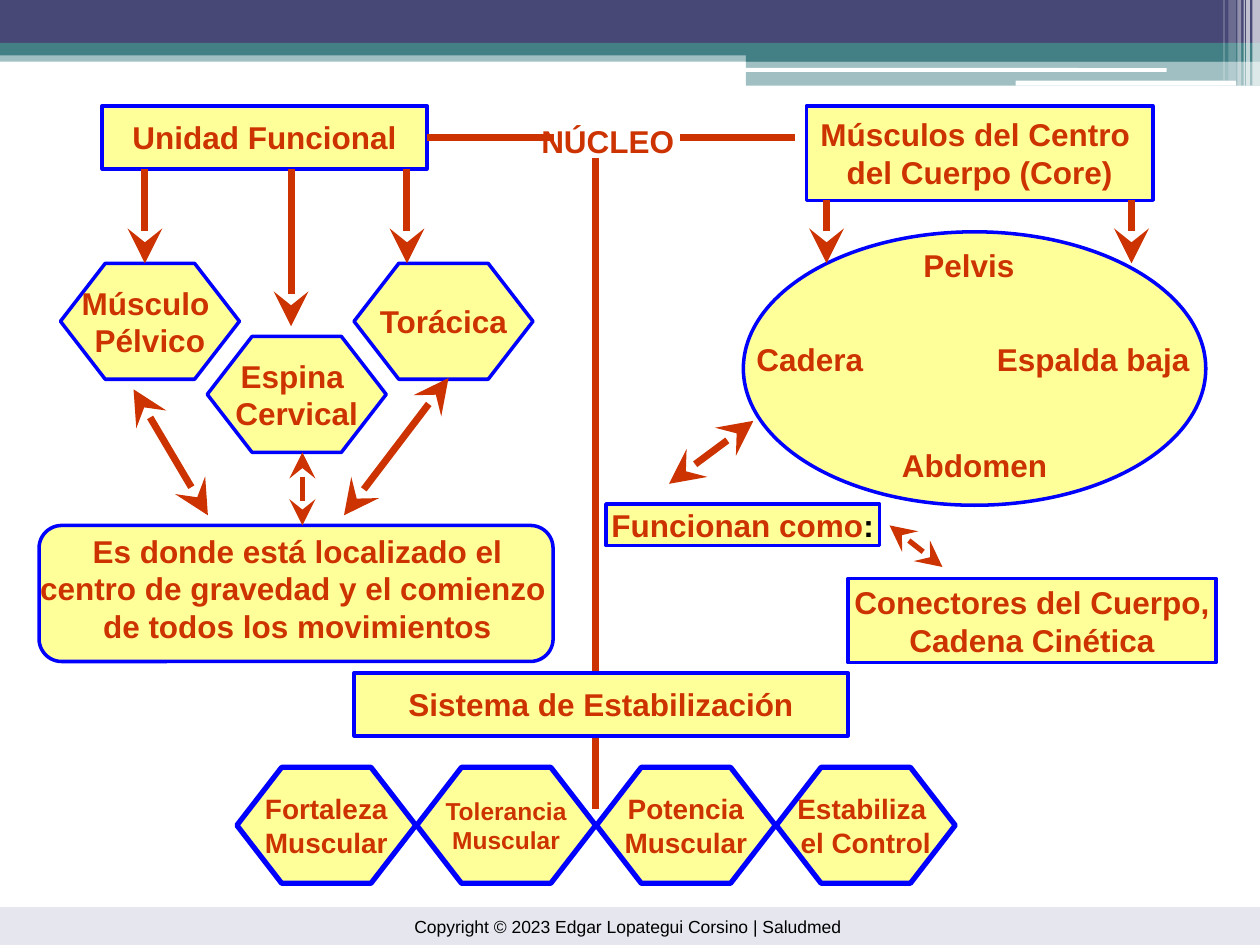
from pptx import Presentation
from pptx.dml.color import RGBColor
from pptx.enum.shapes import MSO_CONNECTOR, MSO_SHAPE
from pptx.enum.text import MSO_ANCHOR, MSO_AUTO_SIZE, PP_ALIGN
from pptx.oxml.ns import qn
from pptx.util import Inches, Pt
from lxml import etree

COLORS = {
    "red": "CC3300", "yellow": "FFFF99", "blue": "0000FF", "black": "000000",
    "white": "FFFFFF", "navy": "484876", "teal": "438086", "footer": "E6E6EF",
}

presentation = Presentation()
presentation.slide_width, presentation.slide_height = Inches(10), Inches(7.5)
slide = presentation.slides.add_slide(presentation.slide_layouts[6])


def add_box(kind, box, lines=(), size=18, fill="yellow", outline=2, alpha=100,
            align=PP_ALIGN.CENTER, color="red", bold=True):
    """Add a preset shape, or a text box when kind is None."""
    place = [Inches(value) for value in box]
    if kind is None:
        shape = slide.shapes.add_textbox(*place)
        shape.text_frame.auto_size = MSO_AUTO_SIZE.SHAPE_TO_FIT_TEXT
    else:
        shape = slide.shapes.add_shape(kind, *place)
        shape.shadow.inherit = False
        shape.fill.solid()
        shape.fill.fore_color.rgb = RGBColor.from_string(COLORS[fill])
        if alpha < 100:
            fill_color = shape.fill._xPr.find(qn("a:solidFill"))[0]
            etree.SubElement(fill_color, qn("a:alpha")).set("val", str(alpha * 1000))
        if outline:
            shape.line.color.rgb = RGBColor.from_string(COLORS["blue"])
            shape.line.width = Pt(outline)
        else:
            shape.line.fill.background()
        shape.text_frame.vertical_anchor = MSO_ANCHOR.MIDDLE
    if kind == MSO_SHAPE.HEXAGON:
        shape.adjustments[0] = 0.386
    shape.text_frame.word_wrap = False
    for index, line in enumerate(lines):
        frame = shape.text_frame
        paragraph = frame.add_paragraph() if index else frame.paragraphs[0]
        paragraph.alignment = align
        paragraph.add_run().text = line
        paragraph.font.name = "Arial"
        paragraph.font.size = Pt(size)
        paragraph.font.bold = bold
        paragraph.font.color.rgb = RGBColor.from_string(COLORS[color])
    return shape


def add_line(start, end, width=4, arrows=()):
    """Add a straight line with stealth heads at the named ends."""
    points = [Inches(value) for value in (*start, *end)]
    line = slide.shapes.add_connector(MSO_CONNECTOR.STRAIGHT, *points)
    line.line.color.rgb = RGBColor.from_string(COLORS["red"])
    line.line.width = Pt(width)
    for arrow in arrows:
        head = etree.SubElement(line.line._get_or_add_ln(), qn(f"a:{arrow}"))
        for key, value in (("type", "stealth"), ("w", "lg"), ("len", "lg")):
            head.set(key, value)
    etree.SubElement(line._element.spPr, qn("a:effectLst"))
    return line


# Header bands and footer
for left, top, width, height, fill, alpha in [
    (0, 0.4, 10, 0.09, "teal", 50),
    (0, 0, 10, 0.34, "navy", 100),
    (0, 0.34, 10, 0.1, "teal", 100),
    (5.92, 0.39, 4.08, 0.1, "teal", 100),
    (5.92, 0.48, 4.08, 0.2, "teal", 50),
    (5.91, 0.54, 3.35, 0.03, "white", 100),
    (8.06, 0.64, 1.75, 0.04, "white", 100),
    (9.94, 0, 0.06, 0.68, "white", 65),
    (9.89, 0, 0.03, 0.68, "white", 65),
    (9.87, 0, 0.01, 0.68, "white", 60),
    (9.82, 0, 0.03, 0.68, "white", 40),
    (9.75, 0, 0.06, 0.64, "white", 20),
    (9.71, 0, 0.01, 0.64, "white", 30),
]:
    kind = MSO_SHAPE.ROUNDED_RECTANGLE if height < 0.05 else MSO_SHAPE.RECTANGLE
    add_box(kind, (left, top, width, height), fill=fill, outline=0, alpha=alpha)
add_box(MSO_SHAPE.RECTANGLE, (0, 7.2, 10, 0.3),
        ["Copyright © 2023 Edgar Lopategui Corsino | Saludmed "],
        size=10, fill="footer", outline=0, color="black", bold=False)

# Central title with its branches
add_box(None, (4.18, 0.92, 1.27, 0.4), ["NÚCLEO"], align=PP_ALIGN.RIGHT)
add_line((5.4, 1.09), (6.31, 1.09))
add_line((4.73, 1.25), (4.73, 6.42))
functional_unit = add_box(MSO_SHAPE.RECTANGLE, (0.81, 0.84, 2.58, 0.5),
                          ["Unidad Funcional"])
add_line((3.39, 1.09), (4.4, 1.09)).begin_connect(functional_unit, 3)

# Rectangles
for box, lines in [
    ((6.4, 0.84, 2.75, 0.75), ["Músculos del Centro ", "del Cuerpo (Core)"]),
    ((6.73, 4.59, 2.92, 0.67), ["Conectores del Cuerpo,", "Cadena Cinética"]),
    ((2.81, 5.34, 3.92, 0.5), ["Sistema de Estabilización"]),
]:
    add_box(MSO_SHAPE.RECTANGLE, box, lines)
function_box = add_box(MSO_SHAPE.RECTANGLE, (4.81, 4, 2.17, 0.33), ["Funcionan como"])
colon = function_box.text_frame.paragraphs[0].add_run()
colon.text = ":"
colon.font.color.rgb = RGBColor.from_string(COLORS["black"])

# Hexagons of the functional unit
for column, (top, lines) in enumerate([
    (2.09, ["Músculo ", "Pélvico"]),
    (2.67, ["Espina ", "Cervical"]),
    (2.09, ["Torácica"]),
]):
    add_box(MSO_SHAPE.HEXAGON, (0.48 + column * 1.165, top, 1.42, 0.92), lines)

# Hexagons of the stabilization system
for column, (size, lines) in enumerate([
    (16, ["Fortaleza", "Muscular"]),
    (14, ["Tolerancia", "Muscular"]),
    (16, ["Potencia", "Muscular"]),
    (16, ["Estabiliza ", "el Control"]),
]):
    add_box(MSO_SHAPE.HEXAGON, (1.88 + column * 1.427, 6.09, 1.42, 0.92), lines,
            size=size, outline=3)

# Centre of gravity
add_box(MSO_SHAPE.ROUNDED_RECTANGLE, (0.31, 4.17, 4.08, 1.08))
gravity_text = add_box(None, (0.15, 4.17, 4.42, 1.04), [
    "Es donde está localizado el",
    "centro de gravedad y el comienzo ",
    "de todos los movimientos",
])
gravity_text.text_frame.word_wrap = True

# Core muscles
add_box(MSO_SHAPE.OVAL, (5.9, 1.84, 3.67, 2.17))
for label, left, top, width in [
    ("Pelvis", 7.23, 1.9, 0.92),
    ("Cadera", 5.9, 2.65, 1.05),
    ("Espalda baja", 7.81, 2.65, 1.73),
    ("Abdomen", 7.06, 3.49, 1.35),
]:
    add_box(None, (left, top, width, 0.4), [label], align=PP_ALIGN.RIGHT)

# Downward arrows
for x, top, bottom in [
    (1.15, 1.34, 2.09), (2.31, 1.34, 2.59), (3.23, 1.34, 2.09),
    (6.56, 1.59, 2.09), (8.98, 1.59, 2.09),
]:
    add_line((x, top), (x, bottom), arrows=["tailEnd"])

# Double arrows
for start, end, width in [
    ((2.4, 3.59), (2.4, 4.17), 3),
    ((3.56, 3), (2.73, 4.09), 4),
    ((1.06, 3.09), (1.65, 4.09), 4),
    ((5.98, 3.34), (5.31, 3.84), 4),
    ((7.48, 4.5), (7.06, 4.17), 3),
]:
    add_line(start, end, width, ["headEnd", "tailEnd"])

presentation.save("out.pptx")
